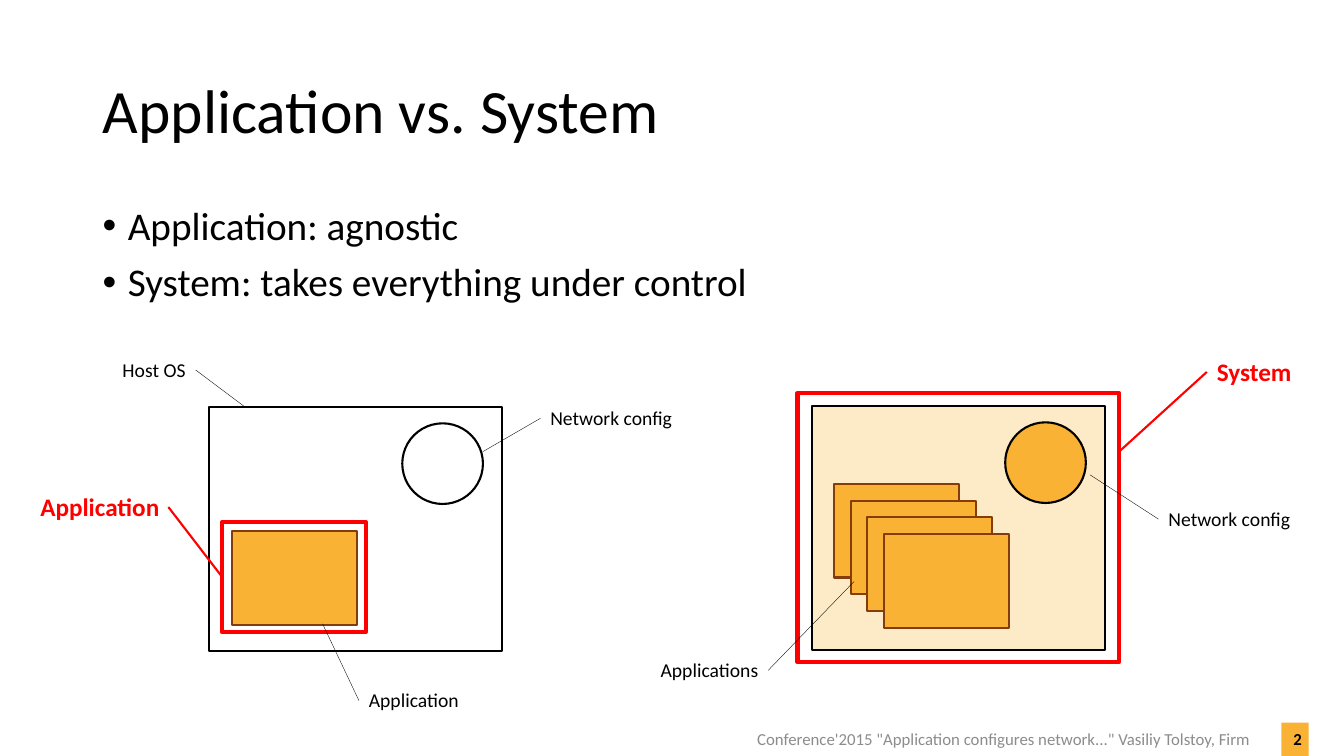
import pptx
import pptx.util
import pptx.dml.color
import pptx.enum.shapes
import pptx.enum.text
import pptx.oxml.ns
import lxml.etree

Inches = pptx.util.Inches
Pt = pptx.util.Pt
Kind = pptx.enum.shapes.MSO_SHAPE
Align = pptx.enum.text.PP_ALIGN
Anchor = pptx.enum.text.MSO_ANCHOR
COLORS = {
    "black": "000000",
    "white": "FFFFFF",
    "amber": "F9B233",
    "brown": "843C0B",
    "red": "FF0000",
    "gray": "8C8C8C",
}
CALLOUT = {"size": 18, "color": "red", "bold": True}


def rgb(name):
    return pptx.dml.color.RGBColor.from_string(COLORS[name])


def add_sub(parent, tag, **attrs):
    return lxml.etree.SubElement(parent, pptx.oxml.ns.qn(tag), **attrs)


def add_bullet(par):
    props = par._p.get_or_add_pPr()
    props.set("marL", str(Inches(0.25)))
    props.set("indent", str(-Inches(0.25)))
    add_sub(props, "a:buFont", typeface="Arial")
    add_sub(props, "a:buChar", char="•")


def write(shape, text, size=14, color="black", bold=False, align=Align.LEFT,
          anchor=Anchor.TOP, space=None, before=None, bullet=False):
    """Fill a shape with text, one paragraph per line."""
    frame = shape.text_frame
    frame.word_wrap = True
    frame.vertical_anchor = anchor
    frame.text = text
    for par in frame.paragraphs:
        par.alignment = align
        if space:
            par.line_spacing = space
        if before:
            par.space_before = Pt(before)
        if bullet:
            add_bullet(par)
        font = par.runs[0].font
        font.name = "Calibri"
        font.size = Pt(size)
        font.bold = bold
        font.color.rgb = rgb(color)


def add_text(slide, text, left, top, width, height, **style):
    box = slide.shapes.add_textbox(
        Inches(left), Inches(top), Inches(width), Inches(height))
    write(box, text, **style)


def add_block(slide, kind, left, top, width, height, fill=None, line=None,
              weight=1.5, alpha=None):
    shape = slide.shapes.add_shape(
        kind, Inches(left), Inches(top), Inches(width), Inches(height))
    shape.shadow.inherit = False
    if fill:
        shape.fill.solid()
        shape.fill.fore_color.rgb = rgb(fill)
    else:
        shape.fill.background()
    if alpha:
        color = shape.fill._xPr.find(".//" + pptx.oxml.ns.qn("a:srgbClr"))
        add_sub(color, "a:alpha", val=str(alpha * 1000))
    if line:
        shape.line.color.rgb = rgb(line)
        shape.line.width = Pt(weight)
    else:
        shape.line.fill.background()


def add_line(slide, start, end, color="black", weight=0.25):
    line = slide.shapes.add_connector(
        pptx.enum.shapes.MSO_CONNECTOR.STRAIGHT,
        *(Inches(v) for v in start + end))
    line.line.color.rgb = rgb(color)
    line.line.width = Pt(weight)
    add_sub(line._element.spPr, "a:effectLst")


def add_host(slide, left, top, fill, alpha=None):
    """Draw a host frame with its network config circle."""
    add_block(slide, Kind.RECTANGLE, left, top, 2.91, 2.42, fill, "black",
              alpha=alpha)
    add_block(slide, Kind.OVAL, left + 1.92, top + 0.16, 0.8, 0.8, fill,
              "black")


def add_app(slide, left, top):
    add_block(slide, Kind.RECTANGLE, left, top, 1.24, 0.93, "amber", "brown")


def add_frame(slide, left, top, width, height):
    add_block(slide, Kind.RECTANGLE, left, top, width, height, line="red",
              weight=3)


def add_single(slide):
    """Draw the left diagram: one application on a host."""
    add_host(slide, 2.07, 4.04, "white")
    add_app(slide, 2.3, 5.27)
    add_frame(slide, 2.2, 5.18, 1.43, 1.09)
    add_text(slide, "Host OS", 0.78, 3.5, 1.16, 0.34, align=Align.RIGHT)
    add_line(slide, (2.42, 4.03), (1.94, 3.67))
    add_text(slide, "Network config", 5.36, 3.98, 2.03, 0.34)
    add_line(slide, (4.79, 4.48), (5.36, 4.15))
    add_text(slide, "Application", 3.56, 6.78, 2.03, 0.34)
    add_line(slide, (3.2, 6.19), (3.56, 6.95))
    add_text(slide, "Application", 0.21, 4.83, 1.47, 0.4, align=Align.RIGHT,
             **CALLOUT)
    add_line(slide, (2.2, 5.72), (1.67, 5.03), "red", 1.5)


def add_system(slide):
    """Draw the right diagram: a system that holds many applications."""
    add_frame(slide, 7.91, 3.9, 3.19, 2.67)
    add_host(slide, 8.05, 4.03, "amber", alpha=27)
    for i in range(4):
        add_app(slide, 8.27 + i / 6, 4.8 + i / 6)
    add_text(slide, "Applications", 5.59, 6.48, 2.03, 0.34, align=Align.RIGHT)
    add_line(slide, (8.47, 5.77), (7.62, 6.65))
    add_text(slide, "Network config", 11.49, 4.98, 1.51, 0.34)
    add_line(slide, (10.81, 4.71), (11.49, 5.15))
    add_text(slide, "System", 11.97, 3.49, 1.3, 0.4, **CALLOUT)
    add_line(slide, (11.1, 4.48), (11.97, 3.69), "red", 1.5)


def add_footer(slide):
    style = {"size": 12, "align": Align.RIGHT, "anchor": Anchor.MIDDLE}
    add_block(slide, Kind.RECTANGLE, 12.71, 7.17, 0.27, 0.33, "amber")
    add_text(slide, "2", 12.53, 7.16, 0.48, 0.34, bold=True, **style)
    add_text(slide, "Conference'2015 \"Application configures network...\" "
             "Vasiliy Tolstoy, Firm", 4.57, 7.16, 7.93, 0.34, color="gray",
             **style)


def main():
    deck = pptx.Presentation()
    deck.slide_width = Inches(13.33)
    deck.slide_height = Inches(7.5)
    slide = deck.slides.add_slide(deck.slide_layouts.get_by_name("Title Only"))
    title = slide.shapes.title
    title.left, title.top = Inches(0.92), Inches(0.4)
    title.width, title.height = Inches(11.5), Inches(1.45)
    write(title, "Application vs. System", size=44, anchor=Anchor.MIDDLE,
          space=0.9)
    add_text(slide,
             "Application: agnostic\nSystem: takes everything under control",
             0.92, 2, 11.5, 1.33, size=28, space=0.9, before=10, bullet=True)
    add_single(slide)
    add_system(slide)
    add_footer(slide)
    deck.save("out.pptx")


if __name__ == "__main__":
    main()
